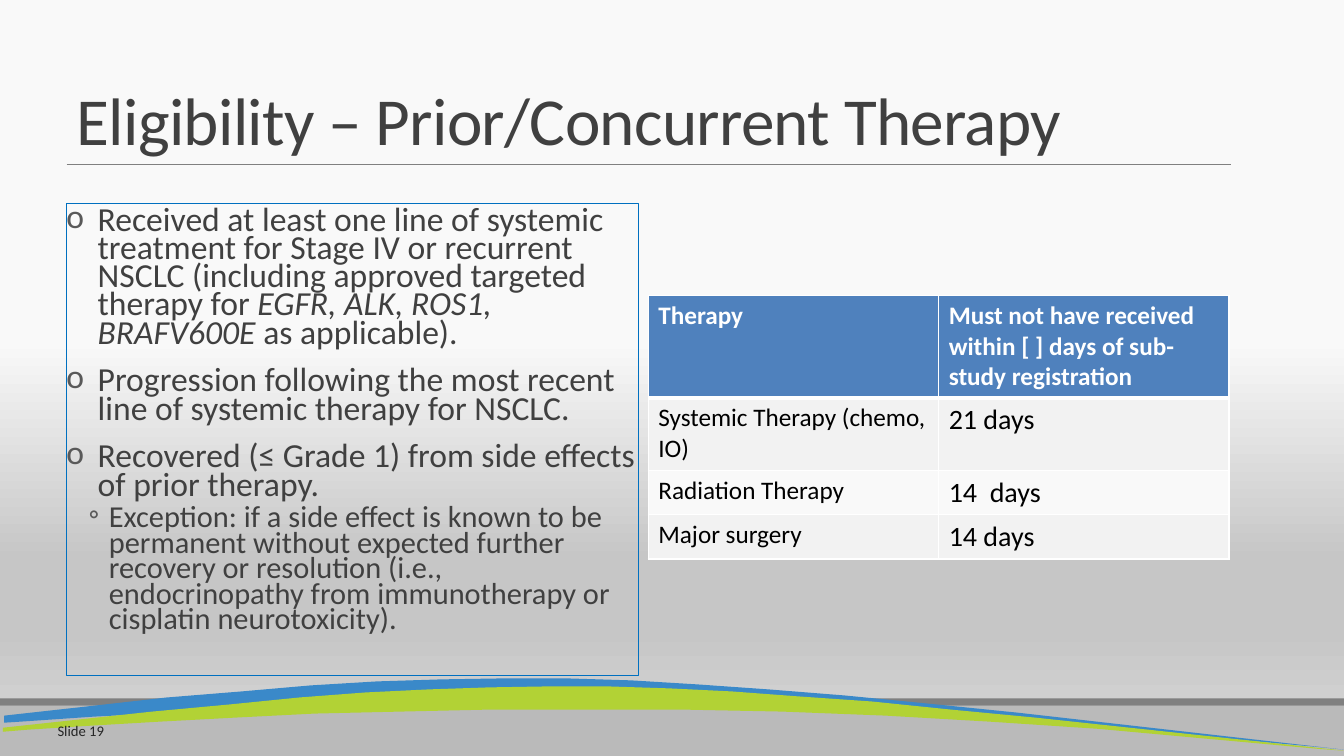
from copy import deepcopy

from lxml.etree import SubElement
from pptx import Presentation
from pptx.dml.color import RGBColor as RGB
from pptx.enum.shapes import MSO_CONNECTOR as LINK, MSO_SHAPE as FORM
from pptx.enum.text import MSO_ANCHOR as ANCHOR, MSO_AUTO_SIZE as FIT, PP_ALIGN as ALIGN
from pptx.oxml.ns import qn
from pptx.util import Inches, Pt

WHITE = RGB(0xFF, 0xFF, 0xFF)
BLACK = RGB(0x00, 0x00, 0x00)
INK = RGB(0x40, 0x40, 0x40)
DARK = RGB(0x26, 0x26, 0x26)
MARK = RGB(0x59, 0x59, 0x59)
GRAY = RGB(0x80, 0x80, 0x80)
SILVER = RGB(0xBA, 0xBA, 0xBA)
FRAME = RGB(0x00, 0x70, 0xC0)
BLUE = RGB(0x3A, 0x89, 0xC9)
LIME = RGB(0xB2, 0xD2, 0x35)
HEAD = RGB(0x4F, 0x81, 0xBD)
LIGHT = RGB(0xF9, 0xF9, 0xF9)
BAND = RGB(0xF2, 0xF2, 0xF2)
MIST = RGB(0xC6, 0xC6, 0xC6)
PALE = RGB(0xD9, 0xD9, 0xD9)

SKY = [(0.45, LIGHT), (0.74, MIST), (0.83, MIST), (1, PALE)]

BLUE_WAVE = [
    (5, 6.73), (4.38, 6.74), (3.74, 6.76), (3.08, 6.8), (2.39, 6.86), (1.65, 6.92),
    (0.85, 7.01), (0.04, 7.1), (0.04, 7.17), (0.2, 7.16), (0.93, 7.11), (1.71, 7.07),
    (2.56, 7.03), (3.45, 7.01), (4.39, 6.99), (5.37, 6.98), (6.39, 6.99), (7.44, 7.01),
    (8.52, 7.05), (9.62, 7.11), (10.74, 7.2), (13.06, 7.41), (13.35, 7.44),
    (10.09, 7.07), (9.2, 6.98), (8.38, 6.9), (7.63, 6.84), (6.92, 6.79), (6.26, 6.75),
    (5.62, 6.73)]
LIME_WAVE = [
    (5.44, 6.81), (4.85, 6.82), (4.25, 6.84), (3.63, 6.87), (2.97, 6.92), (2.27, 6.99),
    (1.51, 7.06), (0.68, 7.15), (0.03, 7.22), (0.03, 7.26), (0.27, 7.24), (0.9, 7.2),
    (1.58, 7.16), (2.33, 7.12), (3.12, 7.08), (3.97, 7.06), (4.86, 7.04), (5.79, 7.04),
    (6.76, 7.04), (7.76, 7.06), (8.78, 7.1), (9.82, 7.16), (10.88, 7.23), (13.08, 7.43),
    (13.36, 7.45), (10.27, 7.12), (9.43, 7.04), (8.65, 6.96), (7.93, 6.91),
    (7.26, 6.86), (6.64, 6.83), (6.03, 6.81)]

POINTS = [
    (0, [("Received at least one line of systemic treatment for Stage IV or recurrent NSCLC "
          "(including approved targeted therapy for ", False),
         ("EGFR, ALK, ROS1, BRAFV600E", True), (" as applicable).", False)]),
    (0, [("Progression following the most recent line of systemic therapy for NSCLC.", False)]),
    (0, [("Recovered (≤ Grade 1) from side effects of prior therapy.", False)]),
    (1, [("Exception: if a side effect is known to be permanent without expected further "
          "recovery or resolution (i.e., endocrinopathy from immunotherapy or cisplatin "
          "neurotoxicity).", False)])]
LEVELS = [("o", 24, 0.31, -0.31, 12, 2), ("◦", 21.7, 0.42, -0.2, 2, 4)]

ROWS = [("Therapy", "Must not have received within [ ] days of sub-study registration"),
        ("Systemic Therapy (chemo, IO)", "21 days"),
        ("Radiation Therapy", "14  days"),
        ("Major surgery", "14 days")]
HEIGHTS = [1.01, 0.72, 0.44, 0.44]


class Page:
    font = "Calibri"

    def __init__(self, deck):
        self.slide = deck.slides.add_slide(deck.slide_layouts[5])
        self.shapes = self.slide.shapes

    def back(self, stops):
        fill = self.slide.background.fill
        fill.gradient()
        fill.gradient_angle = 270
        group = self.slide.element.xpath(".//a:gsLst")[0]
        while len(group) < len(stops):
            group.append(deepcopy(group[0]))
        for stop, (place, color) in zip(fill.gradient_stops, stops):
            stop.position = place
            stop.color.rgb = color

    def run(self, para, text, size, color, bold=False, italic=False):
        run = para.add_run()
        run.text = text
        font = run.font
        font.name, font.size, font.bold, font.italic = self.font, Pt(size), bold, italic
        font.color.rgb = color
        return run

    def paint(self, shape, color):
        shape.shadow.inherit = False
        shape.fill.solid()
        shape.fill.fore_color.rgb = color
        shape.line.fill.background()

    def bar(self, box, color):
        self.paint(self.shapes.add_shape(FORM.RECTANGLE, *map(Inches, box)), color)

    def rule(self, ends, color, width):
        line = self.shapes.add_connector(LINK.STRAIGHT, *map(Inches, ends))
        line.line.color.rgb = color
        line.line.width = Pt(width)
        SubElement(line.element.spPr, qn("a:effectLst"))

    def wave(self, points, color):
        first, *rest = [(Inches(x), Inches(y)) for x, y in points]
        build = self.shapes.build_freeform(*first)
        build.add_line_segments(rest, close=True)
        self.paint(build.convert_to_shape(), color)

    def title(self, box, text):
        title = self.shapes.title
        title.left, title.top, title.width, title.height = map(Inches, box)
        frame = title.text_frame
        frame.auto_size = FIT.NONE
        frame.vertical_anchor = ANCHOR.BOTTOM
        para = frame.paragraphs[0]
        para.alignment = ALIGN.LEFT
        para.line_spacing = 0.85
        run = self.run(para, text, 48, INK)
        run.font._element.set("spc", "-50")

    def bullet(self, para, sign, indent, hang):
        props = para._p.get_or_add_pPr()
        props.set("marL", str(Inches(indent)))
        props.set("indent", str(Inches(hang)))
        color = SubElement(props, qn("a:buClr"))
        SubElement(color, qn("a:srgbClr"), val=str(MARK))
        SubElement(props, qn("a:buFont"), typeface=self.font)
        SubElement(props, qn("a:buChar"), char=sign)

    def body(self, box, points):
        shape = self.shapes.add_shape(FORM.RECTANGLE, *map(Inches, box))
        shape.shadow.inherit = False
        shape.fill.background()
        shape.line.color.rgb = FRAME
        shape.line.width = Pt(0.75)
        frame = shape.text_frame
        frame.word_wrap = True
        frame.vertical_anchor = ANCHOR.TOP
        frame.margin_left = frame.margin_right = 0
        frame.margin_top = frame.margin_bottom = Inches(0.05)
        for i, (level, runs) in enumerate(points):
            sign, size, indent, hang, before, after = LEVELS[level]
            para = frame.add_paragraph() if i else frame.paragraphs[0]
            self.bullet(para, sign, indent, hang)
            para.level = level
            para.alignment = ALIGN.LEFT
            para.line_spacing = 0.7
            para.space_before = Pt(before if i else 0)
            para.space_after = Pt(after)
            for text, italic in runs:
                self.run(para, text, size, INK, italic=italic)

    def edge(self, cell, row):
        props = cell._tc.get_or_add_tcPr()
        thick = {0: "lnB", 1: "lnT"}.get(row)
        for side in ("lnL", "lnR", "lnT", "lnB"):
            line = SubElement(props, qn("a:" + side), w=str(Pt(3 if side == thick else 1)))
            fill = SubElement(line, qn("a:solidFill"))
            SubElement(fill, qn("a:srgbClr"), val=str(WHITE))

    def table(self, box, rows, heights):
        table = self.shapes.add_table(len(rows), len(rows[0]), *map(Inches, box)).table
        for r, (texts, height) in enumerate(zip(rows, heights)):
            table.rows[r].height = Inches(height)
            for c, text in enumerate(texts):
                cell = table.cell(r, c)
                self.edge(cell, r)
                cell.fill.solid()
                cell.fill.fore_color.rgb = HEAD if r == 0 else BAND if r % 2 else LIGHT
                self.run(cell.text_frame.paragraphs[0], text, 20 if r and c else 18,
                         BLACK if r else WHITE, bold=r == 0)

    def label(self, box, text):
        frame = self.shapes.add_textbox(*map(Inches, box)).text_frame
        frame.word_wrap = True
        frame.vertical_anchor = ANCHOR.MIDDLE
        para = frame.paragraphs[0]
        para.alignment = ALIGN.RIGHT
        self.run(para, text, 10.5, DARK)


def main():
    deck = Presentation()
    deck.slide_width, deck.slide_height = Inches(13.33), Inches(7.5)
    page = Page(deck)
    page.back(SKY)
    page.bar((0, 7, 13.33, 0.5), SILVER)
    page.bar((0, 6.93, 13.33, 0.07), GRAY)
    page.rule((0.66, 1.63, 12.21, 1.63), GRAY, 0.5)
    page.wave(BLUE_WAVE, BLUE)
    page.wave(LIME_WAVE, LIME)
    page.title((0.66, 0.04, 11.54, 1.59), "Eligibility – Prior/Concurrent Therapy")
    page.body((0.66, 2.02, 5.67, 4.68), POINTS)
    page.table((6.43, 2.93, 5.76, sum(HEIGHTS)), ROWS, HEIGHTS)
    page.label((0.18, 7.05, 0.95, 0.4), "Slide 19")
    deck.save("out.pptx")


if __name__ == "__main__":
    main()
